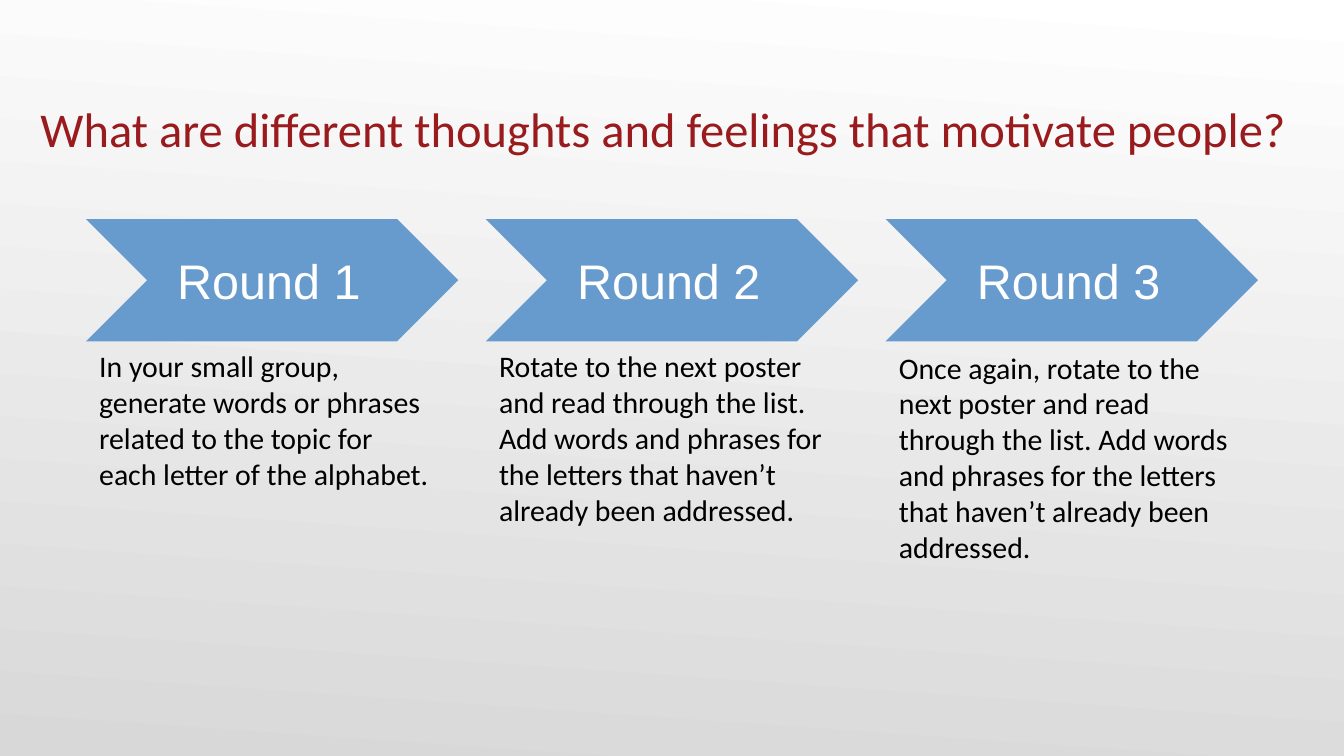
from pptx import Presentation
from pptx.dml.color import RGBColor
from pptx.enum import shapes, text
from pptx.util import Inches, Pt

WHITE = RGBColor(0xFF, 0xFF, 0xFF)
GREY = RGBColor(0xD8, 0xD8, 0xD8)
BLUE = RGBColor(0x67, 0x9B, 0xCD)
RED = RGBColor(0x99, 0x1B, 0x1E)
BLACK = RGBColor(0, 0, 0)

FIRST_LEFT, LAST_LEFT, TOP = 0.64, 6.59, 1.63
CHEVRON_WIDTH, CHEVRON_HEIGHT = 2.77, 0.91

# label, instructions, and the gap above, width and height of the instructions
ROUNDS = [
    ("Round 1",
     "In your small group, generate words or phrases related to the topic "
     "for each letter of the alphabet.", 0, 2.67, 1.45),
    ("Round 2",
     "Rotate to the next poster and read through the list. Add words and "
     "phrases for the letters that haven’t already been addressed.",
     0, 2.67, 1.95),
    ("Round 3",
     "Once again, rotate to the next poster and read through the list. Add "
     "words and phrases for the letters that haven’t already been addressed.",
     0.01, 2.77, 1.74),
]


def style(para, font_name, size, color):
    para.font.name = font_name
    para.font.size = Pt(size)
    para.font.color.rgb = color


def paint_background(page):
    fill = page.background.fill
    fill.gradient()
    fill.gradient_angle = 266
    for stop, color, position in zip(fill.gradient_stops, (WHITE, GREY), (0, 1)):
        stop.color.rgb = color
        stop.position = position


def set_title(page, words, left, top, width, height):
    title = page.shapes.title
    title.left, title.top = Inches(left), Inches(top)
    title.width, title.height = Inches(width), Inches(height)
    frame = title.text_frame
    frame.text = words
    frame.word_wrap = True
    frame.auto_size = text.MSO_AUTO_SIZE.NONE
    frame.vertical_anchor = text.MSO_ANCHOR.TOP
    frame.margin_left = frame.margin_right = Inches(0.1)
    frame.margin_top = frame.margin_bottom = Inches(0.1)
    para = frame.paragraphs[0]
    para.alignment = text.PP_ALIGN.CENTER
    style(para, "Calibri", 26, RED)


def add_text(page, words, left, top, width, height, font_name, size, color):
    box = page.shapes.add_textbox(
        Inches(left), Inches(top), Inches(width), Inches(height))
    frame = box.text_frame
    frame.word_wrap = True
    frame.text = words
    style(frame.paragraphs[0], font_name, size, color)


def add_round(page, left, top, label, instructions, gap, width, height):
    """Place a chevron with its label, and the instructions below it."""
    chevron = page.shapes.add_shape(
        shapes.MSO_SHAPE.CHEVRON, Inches(left), Inches(top),
        Inches(CHEVRON_WIDTH), Inches(CHEVRON_HEIGHT))
    chevron.adjustments[0] = 0.5
    chevron.shadow.inherit = False
    chevron.fill.solid()
    chevron.fill.fore_color.rgb = BLUE
    chevron.line.fill.background()
    add_text(page, label, left + 0.58, top + 0.19, 1.61, 0.54,
             "Arial", 26, WHITE)
    add_text(page, instructions, left, top + CHEVRON_HEIGHT + gap,
             width, height, "Calibri", 16, BLACK)


def main():
    deck = Presentation()
    deck.slide_width = Inches(10)
    deck.slide_height = deck.slide_width * 9 // 16
    page = deck.slides.add_slide(deck.slide_layouts.get_by_name("Title Only"))
    paint_background(page)
    set_title(page,
              "What are different thoughts and feelings that motivate people?",
              0, 0.64, 9.88, 0.72)
    pitch = (LAST_LEFT - FIRST_LEFT) / (len(ROUNDS) - 1)
    for index, contents in enumerate(ROUNDS):
        add_round(page, FIRST_LEFT + index * pitch, TOP, *contents)
    deck.save("out.pptx")


if __name__ == "__main__":
    main()
